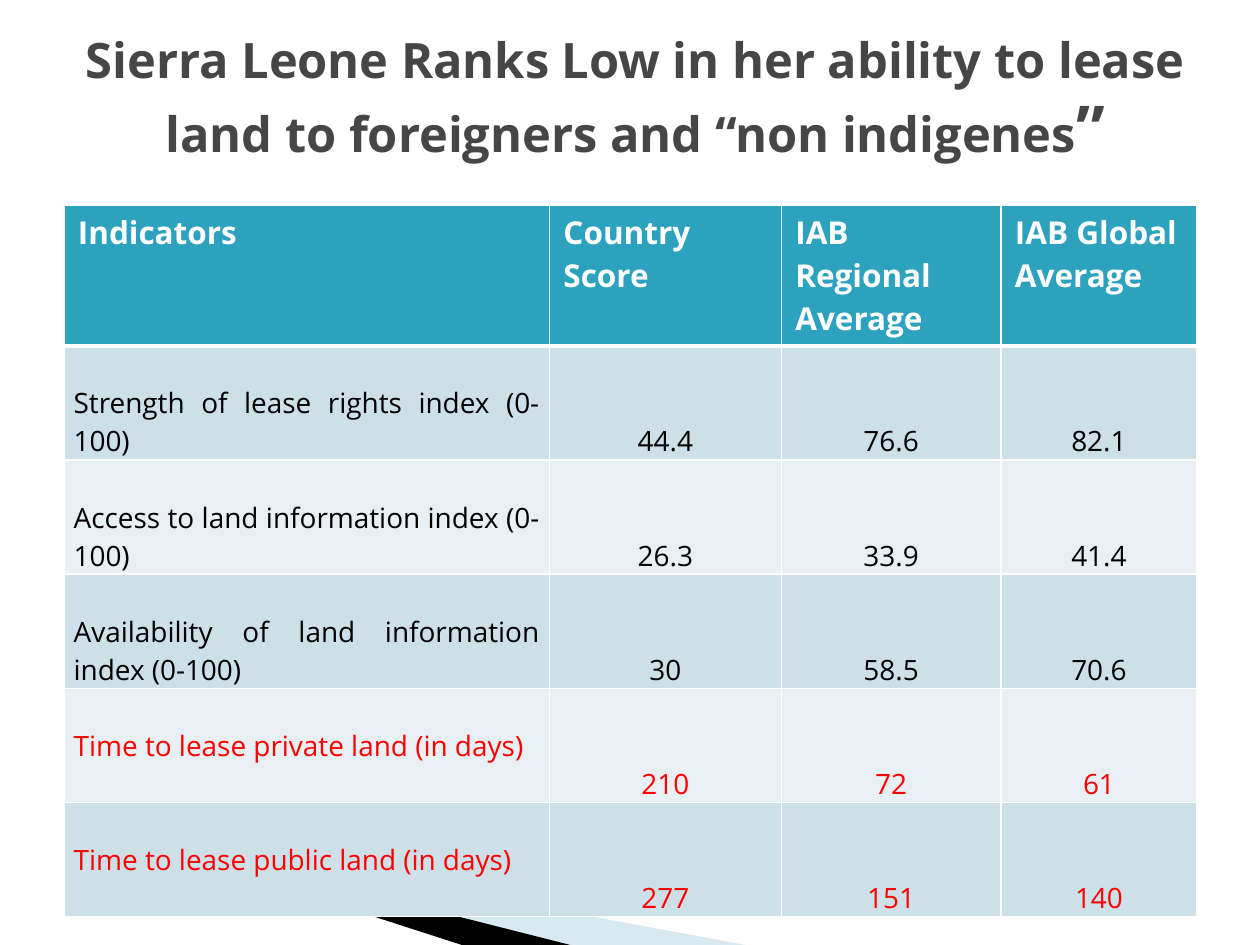
from lxml import etree
from pptx import Presentation
from pptx.dml.color import RGBColor
from pptx.enum.text import MSO_ANCHOR, MSO_AUTO_SIZE, PP_ALIGN
from pptx.oxml.ns import qn
from pptx.util import Pt

LEFT, CENTER, JUSTIFY = PP_ALIGN.LEFT, PP_ALIGN.CENTER, PP_ALIGN.JUSTIFY
TOP, MIDDLE, BOTTOM = MSO_ANCHOR.TOP, MSO_ANCHOR.MIDDLE, MSO_ANCHOR.BOTTOM
FONT = "Open Sans"
COLORS = {
    "title": "464646", "header": "2DA2BF", "band_dark": "CDE0E8",
    "band_light": "E8F0F4", "white": "FFFFFF", "black": "000000",
    "red": "FF0000", "swoosh": "9FCBDC",
}
COLUMN_WIDTHS = (277.5, 132.5, 125.5, 112)
HEADER_HEIGHT, ROW_HEIGHT, LINE_HEIGHT = 80.5, 65.2, 21.8
HEADERS = ("Indicators", "Country Score", "IAB Regional Average", "IAB Global Average")
ROWS = (
    ("Strength of lease rights index (0-100)", "44.4", "76.6", "82.1"),
    ("Access to land information index (0-100)", "26.3", "33.9", "41.4"),
    ("Availability of land information index (0-100)", "30", "58.5", "70.6"),
    ("Time to lease private land (in days)", "210", "72", "61"),
    ("Time to lease public land (in days)", "277", "151", "140"),
)


def rgb(name):
    """Return the named colour."""
    return RGBColor.from_string(COLORS[name])


def add_span(para, text, size=16, color="black", bold=False, align=LEFT):
    """Add formatted text to a paragraph."""
    para.alignment = align
    span = para.add_run()
    span.text = text
    span.font.name, span.font.size, span.font.bold = FONT, Pt(size), bold
    span.font.color.rgb = rgb(color)


def add_title(page):
    """Place and fill the title, with its larger closing quote."""
    box = page.shapes.title
    box.left, box.top, box.width, box.height = Pt(36), Pt(0), Pt(654), Pt(111.5)
    frame = box.text_frame
    frame.word_wrap = True
    frame.auto_size = MSO_AUTO_SIZE.NONE
    frame.vertical_anchor = MIDDLE
    para = frame.paragraphs[0]
    for text, size in (
        ("Sierra Leone Ranks Low in her ability to lease land to foreigners and “non indigenes", 27.9),
        ("”", 36.9),
    ):
        add_span(para, text, size=size, color="title", bold=True, align=CENTER)


def add_swoosh(page, points, color, opacity=100):
    """Draw a filled outline through points, with an opacity in percent."""
    start, *others = [(Pt(x), Pt(y)) for x, y in points]
    builder = page.shapes.build_freeform(*start, scale=1.0)
    builder.add_line_segments(others, close=True)
    shape = builder.convert_to_shape()
    shape.shadow.inherit = False
    shape.line.fill.background()
    shape.fill.solid()
    shape.fill.fore_color.rgb = rgb(color)
    if opacity < 100:
        tint = shape.fill._xPr.find(qn("a:solidFill"))[0]
        etree.SubElement(tint, qn("a:alpha")).set("val", str(opacity * 1000))


def set_borders(cell, top, bottom):
    """Give a cell white borders, with the top and bottom widths in points."""
    properties = cell._tc.get_or_add_tcPr()
    for side, width in (("L", 1), ("R", 1), ("T", top), ("B", bottom)):
        line = etree.SubElement(properties, qn(f"a:ln{side}"), w=str(Pt(width)))
        fill = etree.SubElement(line, qn("a:solidFill"))
        etree.SubElement(fill, qn("a:srgbClr"), val=COLORS["white"])


def fill_cell(cell, text, fill, insets, anchor, top=1, bottom=1, **text_format):
    """Write a cell with its fill, borders and insets."""
    set_borders(cell, top, bottom)
    cell.fill.solid()
    cell.fill.fore_color.rgb = rgb(fill)
    cell.vertical_anchor = anchor
    cell.margin_left, cell.margin_top, cell.margin_right, cell.margin_bottom = map(Pt, insets)
    add_span(cell.text_frame.paragraphs[0], text, **text_format)


def add_scores(page):
    """Add the table of lease indicators."""
    height = HEADER_HEIGHT + len(ROWS) * ROW_HEIGHT
    table = page.shapes.add_table(
        len(ROWS) + 1, len(HEADERS), Pt(36.5), Pt(117), Pt(sum(COLUMN_WIDTHS)), Pt(height)
    ).table
    for column, width in zip(table.columns, COLUMN_WIDTHS):
        column.width = Pt(width)
    for index, row in enumerate(table.rows):
        row.height = Pt(ROW_HEIGHT if index else HEADER_HEIGHT)
    for column, text in enumerate(HEADERS):
        fill_cell(table.cell(0, column), text, "header", (8, 3.6, 8, 3.6), TOP,
                  bottom=3, size=18, color="white", bold=True)
    for index, values in enumerate(ROWS, start=1):
        is_time = values[0].startswith("Time")
        for column, text in enumerate(values):
            lift = LINE_HEIGHT if is_time and column == 0 else 0
            fill_cell(table.cell(index, column), text,
                      "band_dark" if index % 2 else "band_light",
                      (5.6, 0, 5.6, lift), BOTTOM, top=3 if index == 1 else 1,
                      color="red" if is_time else "black",
                      align=CENTER if column else JUSTIFY)


def main():
    """Build and save the slide."""
    deck = Presentation()
    deck.slide_width, deck.slide_height = Pt(720), Pt(540)
    page = deck.slides.add_slide(deck.slide_layouts[5])
    add_swoosh(page, ((40, 468.5), (426, 540), (325, 540)), "swoosh", opacity=40)
    add_swoosh(page, ((38, 467), (326, 540), (264, 540)), "black")
    add_scores(page)
    add_title(page)
    deck.save("out.pptx")


if __name__ == "__main__":
    main()
